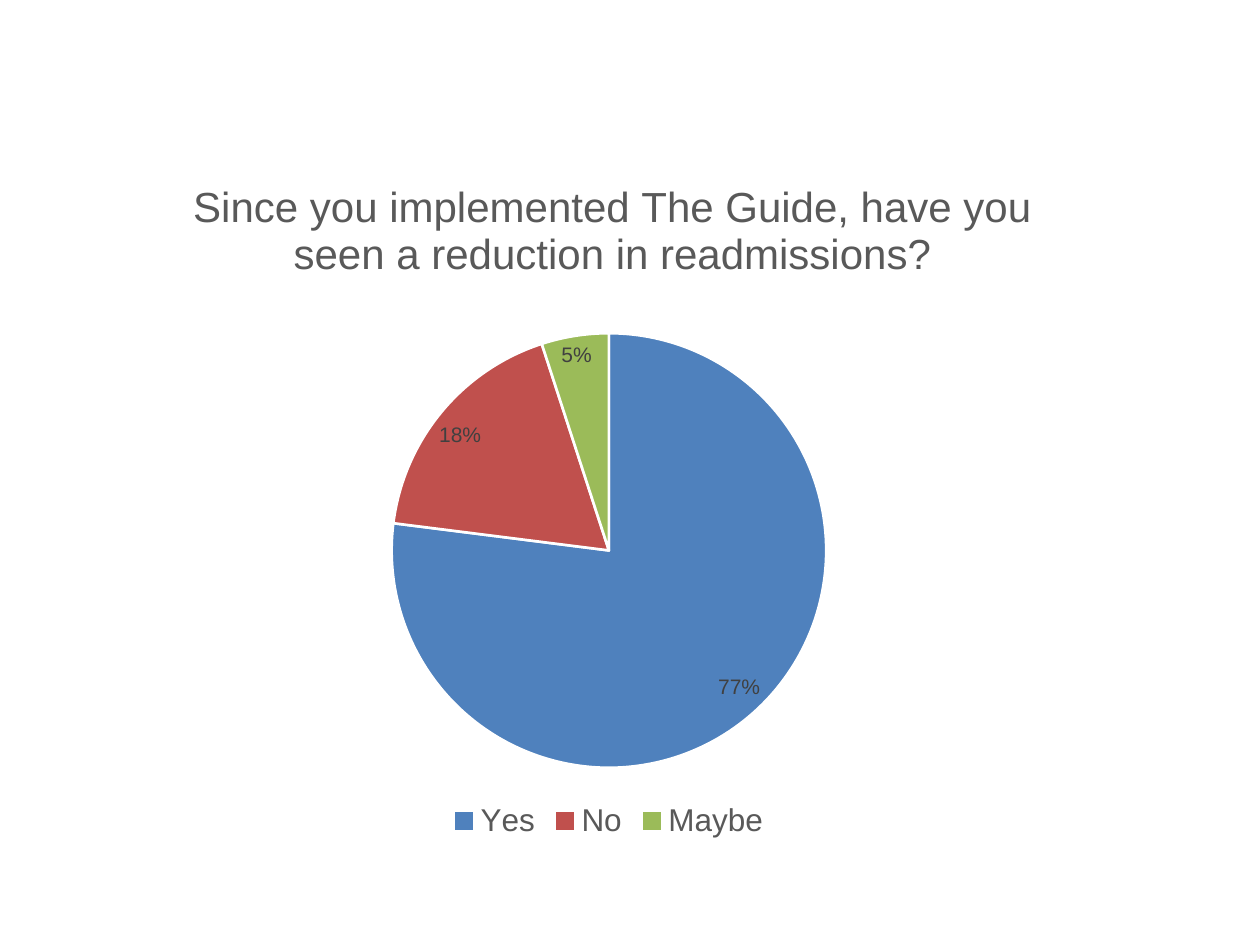
"""Build a slide with a pie chart of survey answers about readmissions."""
from dataclasses import dataclass

import pptx
import pptx.chart.data
import pptx.dml.color
import pptx.enum.chart
import pptx.oxml
import pptx.oxml.ns
import pptx.util

RGBColor = pptx.dml.color.RGBColor
BLUE = RGBColor(0x4F, 0x81, 0xBD)
RED = RGBColor(0xC0, 0x50, 0x4D)
GREEN = RGBColor(0x9B, 0xBB, 0x59)
WHITE = RGBColor(0xFF, 0xFF, 0xFF)
GREY = RGBColor(0x59, 0x59, 0x59)
DARK_GREY = RGBColor(0x40, 0x40, 0x40)
BLACK = RGBColor(0, 0, 0)
FONT = "Arial"
PX = 914400 // 126
TITLE = "Since you implemented The Guide, have you seen a reduction in readmissions?"


@dataclass(frozen=True)
class Answer:
    name: str
    share: float
    color: RGBColor


ANSWERS = [
    Answer("Yes", 0.77, BLUE),
    Answer("No", 0.18, RED),
    Answer("Maybe", 0.05, GREEN),
]


def style_font(font, size: int, color: RGBColor) -> None:
    """Apply the slide's typeface with a size and colour."""
    font.name = FONT
    font.size = pptx.util.Pt(size)
    font.bold = False
    font.color.rgb = color


def write(tf, text: str, *, size: int, color: RGBColor) -> None:
    """Put formatted text into a text frame."""
    tf.text = text
    p = tf.paragraphs[0]
    style_font(p.font, size, color)
    style_font(p.runs[0].font, size, color)


def place(element, target: str = "", **fractions: float) -> None:
    """Give a chart part a manual layout in fractions of the chart."""
    inner = f'<c:layoutTarget val="{target}"/>' if target else ""
    modes = "".join(f'<c:{k}Mode val="edge"/>' for k in ("x", "y"))
    values = "".join(f'<c:{k} val="{v}"/>' for k, v in fractions.items())
    layout = pptx.oxml.parse_xml(
        f'<c:layout {pptx.oxml.ns.nsdecls("c")}><c:manualLayout>'
        f"{inner}{modes}{values}</c:manualLayout></c:layout>"
    )
    for old in element.findall(pptx.oxml.ns.qn("c:layout")):
        element.remove(old)
    text = element.find(pptx.oxml.ns.qn("c:tx"))
    if text is None:
        element.insert(0, layout)
    else:
        text.addnext(layout)


def add_pie(s, answers: list[Answer], x: int, y: int, w: int, h: int) -> None:
    """Draw the answers as a pie chart with title, labels and legend."""
    data = pptx.chart.data.CategoryChartData(number_format="0%")
    data.categories = [a.name for a in answers]
    data.add_series("Series 1", [a.share for a in answers])
    chart = s.shapes.add_chart(
        pptx.enum.chart.XL_CHART_TYPE.PIE, x * PX, y * PX, w * PX, h * PX, data
    ).chart
    style_font(chart.font, 10, BLACK)

    chart.has_title = True
    write(chart.chart_title.text_frame, TITLE, size=24, color=GREY)
    chart.chart_title.include_in_layout = False
    place(chart.chart_title._element, x=0.14, y=0.04)

    chart.has_legend = True
    chart.legend.position = pptx.enum.chart.XL_LEGEND_POSITION.BOTTOM
    chart.legend.include_in_layout = False
    style_font(chart.legend.font, 18, GREY)

    plot = chart.plots[0]
    plot.vary_by_categories = True
    place(plot._element.getparent(), "inner", x=0.31, y=0.27, w=0.38, h=0.62)
    for i, answer in enumerate(answers):
        fmt = plot.series[0].points[i].format
        fmt.fill.solid()
        fmt.fill.fore_color.rgb = answer.color
        fmt.line.color.rgb = WHITE
        fmt.line.width = pptx.util.Pt(1.5)

    labels = plot.series[0].data_labels
    labels.show_value = True
    labels.number_format = "0%"
    labels.number_format_is_linked = False
    labels.position = pptx.enum.chart.XL_LABEL_POSITION.BEST_FIT
    style_font(labels.font, 12, DARK_GREY)


def main() -> None:
    """Create and save the presentation."""
    prs = pptx.Presentation()
    prs.slide_width, prs.slide_height = 1260 * PX, 945 * PX
    s = prs.slides.add_slide(prs.slide_layouts[6])
    add_pie(s, ANSWERS, 21, 144, 1176, 701)
    prs.save("out.pptx")


if __name__ == "__main__":
    main()
